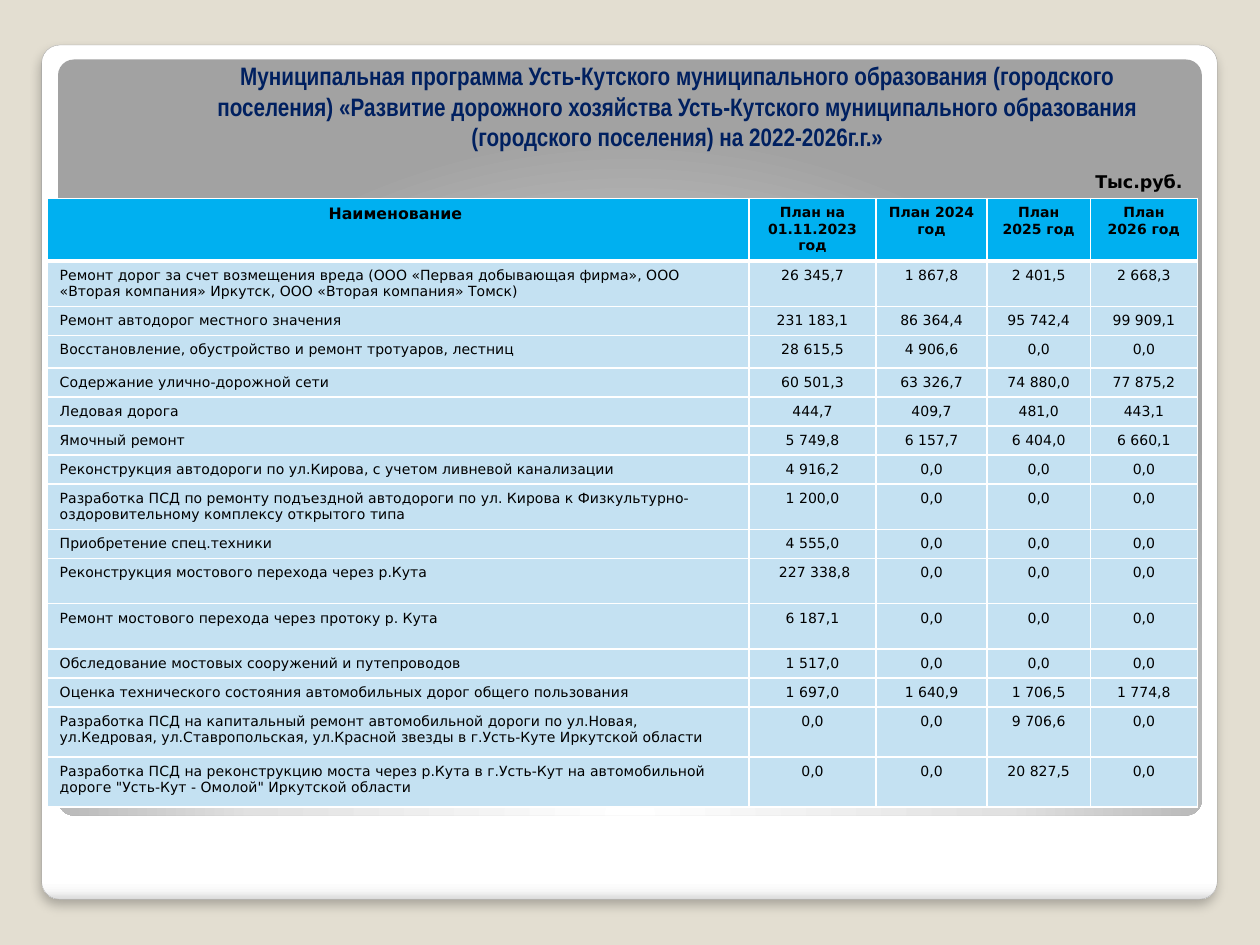
from lxml import etree
from pptx import Presentation
from pptx import util as u
from pptx.dml.color import RGBColor
from pptx.enum import shapes, text
from pptx.oxml import ns

COLORS = {
    "background": "E3DED1", "white": "FFFFFF", "near_white": "F7F7F7",
    "edge": "DADADA", "outline": "A4A4A4", "panel_mid": "E1E1E1",
    "panel_dark": "A2A2A2", "title": "002060", "text": "000000",
    "header": "00B0F0", "row": "C4E1F2",
}
BODY_FONT = "DejaVu Sans"
TITLE = (
    "Муниципальная программа Усть-Кутского муниципального образования "
    "(городского поселения) «Развитие дорожного хозяйства Усть-Кутского "
    "муниципального образования (городского поселения) на 2022-2026г.г.»"
)
HEADERS = ["Наименование ", "План на 01.11.2023 год", "План 2024 год",
           "План 2025 год", "План 2026 год"]
COLUMN_WIDTHS = [14.15, 2.56, 2.24, 2.08, 2.16]
HEADER_HEIGHT = 1.26
SINGLE, MEDIUM, DOUBLE, TALL = 0.58, 0.66, 0.91, 1.01
ZERO = "0,0"
ROWS = [
    (DOUBLE, "Ремонт дорог за счет возмещения вреда (ООО «Первая добывающая фирма», "
     "ООО «Вторая компания» Иркутск, ООО «Вторая компания» Томск)",
     "26 345,7", "1 867,8", "2 401,5", "2 668,3"),
    (SINGLE, "Ремонт автодорог местного значения",
     "231 183,1", "86 364,4", "95 742,4", "99 909,1"),
    (MEDIUM, "Восстановление, обустройство и ремонт тротуаров, лестниц",
     "28 615,5", "4 906,6", ZERO, ZERO),
    (SINGLE, "Содержание улично-дорожной сети",
     "60 501,3", "63 326,7", "74 880,0", "77 875,2"),
    (SINGLE, "Ледовая дорога", "444,7", "409,7", "481,0", "443,1"),
    (SINGLE, "Ямочный ремонт", "5 749,8", "6 157,7", "6 404,0", "6 660,1"),
    (SINGLE, "Реконструкция автодороги по ул.Кирова, с учетом ливневой канализации",
     "4 916,2", ZERO, ZERO, ZERO),
    (DOUBLE, "Разработка ПСД по ремонту подъездной автодороги по ул. Кирова "
     "к Физкультурно-оздоровительному комплексу открытого типа",
     "1 200,0", ZERO, ZERO, ZERO),
    (SINGLE, "Приобретение спец.техники", "4 555,0", ZERO, ZERO, ZERO),
    (DOUBLE, "Реконструкция мостового перехода через р.Кута",
     " 227 338,8", ZERO, ZERO, ZERO),
    (DOUBLE, "Ремонт мостового перехода через протоку р. Кута",
     "6 187,1", ZERO, ZERO, ZERO),
    (SINGLE, "Обследование мостовых сооружений и путепроводов",
     "1 517,0", ZERO, ZERO, ZERO),
    (SINGLE, "Оценка технического состояния автомобильных дорог общего пользования",
     "1 697,0", "1 640,9", "1 706,5", "1 774,8"),
    (TALL, "Разработка ПСД на капитальный ремонт автомобильной дороги по ул.Новая, "
     "ул.Кедровая, ул.Ставропольская, ул.Красной звезды в г.Усть-Куте Иркутской области",
     ZERO, ZERO, "9 706,6", ZERO),
    (TALL, "Разработка ПСД на реконструкцию моста через р.Кута в г.Усть-Кут на "
     "автомобильной дороге \"Усть-Кут - Омолой\" Иркутской области",
     ZERO, ZERO, "20 827,5", ZERO),
]


def rgb(name):
    return RGBColor.from_string(COLORS[name])


def add_node(parent, tag, **attributes):
    node = etree.SubElement(parent, ns.qn(tag))
    for key, value in attributes.items():
        node.set(key, str(value))
    return node


def write(frame, words, size, color="text", font=BODY_FONT, bold=False,
          align=text.PP_ALIGN.CENTER):
    frame.word_wrap = True
    para = frame.paragraphs[0]
    para.alignment = align
    span = para.add_run()
    span.text = words
    span.font.name = font
    span.font.size = u.Pt(size)
    span.font.bold = bold
    span.font.color.rgb = rgb(color)


def add_panel(page, left, top, width, height, stops, circular=False):
    panel = page.shapes.add_shape(
        shapes.MSO_SHAPE.ROUNDED_RECTANGLE,
        u.Cm(left), u.Cm(top), u.Cm(width), u.Cm(height))
    panel.adjustments[0] = 0.021
    panel.shadow.inherit = False
    panel.line.fill.background()
    panel.fill.gradient()
    gradient = panel._element.spPr.find(ns.qn("a:gradFill"))
    for child in list(gradient):
        gradient.remove(child)
    stop_list = add_node(gradient, "a:gsLst")
    for position, color in stops:
        stop = add_node(stop_list, "a:gs", pos=position * 1000)
        add_node(stop, "a:srgbClr", val=COLORS[color])
    if circular:
        focus = add_node(gradient, "a:path", path="circle")
        add_node(focus, "a:fillToRect", l=50000, t=175000, r=50000, b=-75000)
    else:
        add_node(gradient, "a:lin", ang=90 * 60000, scaled=0)
    return panel


def add_card(page):
    card = add_panel(page, 0.84, 0.91, 23.7, 17.22,
                     [(0, "white"), (98, "white"), (99, "near_white"), (100, "edge")])
    card.line.color.rgb = rgb("outline")
    card.line.width = u.Pt(0.16)
    effects = card._element.spPr.find(ns.qn("a:effectLst"))
    shadow = add_node(effects, "a:outerShdw", blurRad=u.Pt(6), dist=u.Pt(4),
                      dir=90 * 60000, algn="t", rotWithShape=0)
    color = add_node(shadow, "a:srgbClr", val=COLORS["text"])
    add_node(color, "a:alpha", val=25000)


def place_title(page):
    title = page.shapes.title
    page.shapes._spTree.append(title._element)
    title.left, title.top = u.Cm(3.94), u.Cm(0.79)
    title.width, title.height = u.Cm(19.43), u.Cm(2.39)
    frame = title.text_frame
    frame.auto_size = text.MSO_AUTO_SIZE.NONE
    frame.vertical_anchor = text.MSO_ANCHOR.BOTTOM
    write(frame, TITLE, 14.4, "title", "Arial Narrow", True)


def add_unit_label(page):
    box = page.shapes.add_textbox(u.Cm(21.69), u.Cm(3.33), u.Cm(2.54), u.Cm(0.64))
    box.text_frame.vertical_anchor = text.MSO_ANCHOR.MIDDLE
    write(box.text_frame, "Тыс.руб.", 10, bold=True)


def style_cell(cell, fill, bottom_width=1):
    properties = cell._tc.get_or_add_tcPr()
    for side, width in (("L", 1), ("R", 1), ("T", 1), ("B", bottom_width)):
        border = add_node(properties, f"a:ln{side}", w=u.Pt(width))
        solid = add_node(border, "a:solidFill")
        add_node(solid, "a:srgbClr", val=COLORS["white"])
    cell.fill.solid()
    cell.fill.fore_color.rgb = rgb(fill)


def add_budget_table(page):
    heights = [HEADER_HEIGHT] + [row[0] for row in ROWS]
    table = page.shapes.add_table(
        len(heights), len(HEADERS), u.Cm(0.95), u.Cm(4),
        u.Cm(sum(COLUMN_WIDTHS)), u.Cm(sum(heights))).table
    for column, width in zip(table.columns, COLUMN_WIDTHS):
        column.width = u.Cm(width)
    for row, height in zip(table.rows, heights):
        row.height = u.Cm(height)
    for index, words in enumerate(HEADERS):
        cell = table.cell(0, index)
        style_cell(cell, "header", 3)
        write(cell.text_frame, words, 8 if index else 9, bold=True)
    for row_index, (_, *values) in enumerate(ROWS, 1):
        for index, words in enumerate(values):
            cell = table.cell(row_index, index)
            style_cell(cell, "row")
            align = text.PP_ALIGN.CENTER if index else text.PP_ALIGN.LEFT
            write(cell.text_frame, words, 8, align=align)


def main():
    deck = Presentation()
    deck.slide_width, deck.slide_height = u.Cm(25.4), u.Cm(19.05)
    page = deck.slides.add_slide(deck.slide_layouts[5])
    page.background.fill.solid()
    page.background.fill.fore_color.rgb = rgb("background")
    add_card(page)
    add_panel(page, 1.17, 1.2, 23.06, 15.24,
              [(0, "white"), (55, "panel_mid"), (100, "panel_dark")], circular=True)
    place_title(page)
    add_budget_table(page)
    add_unit_label(page)
    deck.save("out.pptx")


if __name__ == "__main__":
    main()
